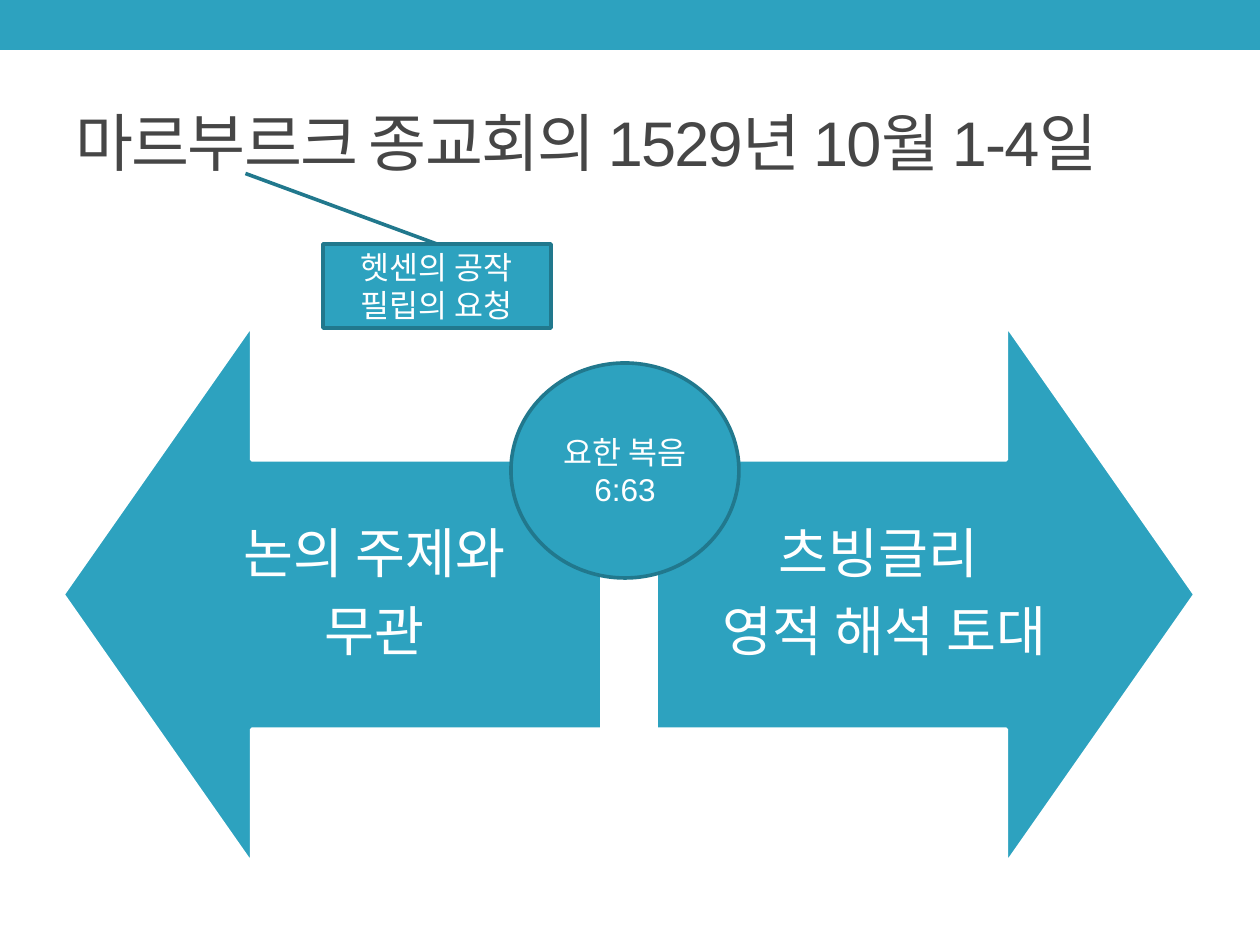
from dataclasses import dataclass

from pptx import Presentation
from pptx.dml.color import RGBColor
from pptx.enum.shapes import MSO_SHAPE
from pptx.enum.text import MSO_ANCHOR, PP_ALIGN
from pptx.util import Emu, Pt

RECTANGLE = MSO_SHAPE.RECTANGLE
ARROW = MSO_SHAPE.UP_ARROW
ELLIPSE = MSO_SHAPE.OVAL
CALLOUT = MSO_SHAPE.LINE_CALLOUT_1
MIDDLE = MSO_ANCHOR.MIDDLE
LEFT, CENTER = PP_ALIGN.LEFT, PP_ALIGN.CENTER

PX = 914400 / 126
SLIDE_W, SLIDE_H = 1260, 945


@dataclass(frozen=True)
class Theme:
    font: str = "Arial"
    teal: str = "2DA2BF"
    dark_teal: str = "21788D"
    white: str = "FFFFFF"
    title_ink: str = "464646"
    title_size: int = 36
    argument_size: int = 31
    note_size: int = 18
    line_width: float = 2.08


def px(length):
    return Emu(round(length * PX))


def assign(target, values):
    for name, value in values.items():
        setattr(target, name, value)


class SlideBuilder:
    def __init__(self, slide, theme):
        self.slide = slide
        self.theme = theme

    def shape(self, kind, box, line=None, rotation=0, adjustments=()):
        shape = self.slide.shapes.add_shape(kind, *map(px, box))
        shape.shadow.inherit = False
        shape.rotation = rotation
        for index, value in enumerate(adjustments):
            shape.adjustments[index] = value
        shape.fill.solid()
        shape.fill.fore_color.rgb = RGBColor.from_string(self.theme.teal)
        if line:
            shape.line.color.rgb = RGBColor.from_string(line)
            shape.line.width = Pt(self.theme.line_width)
        else:
            shape.line.fill.background()
        return shape

    def fill_text(self, shape, lines, size, color, align=CENTER, inset=None,
                  paragraph_format=None, tracking=None):
        """Fill a shape with one paragraph per line; tracking is in 1/100 pt."""
        frame = shape.text_frame
        assign(frame, {"word_wrap": True, "vertical_anchor": MIDDLE})
        if inset is not None:
            sides = ("left", "top", "right", "bottom")
            assign(frame, {f"margin_{side}": px(inset) for side in sides})
        for index, line in enumerate(lines):
            paragraph = frame.add_paragraph() if index else frame.paragraphs[0]
            assign(paragraph, {"alignment": align, **(paragraph_format or {})})
            run = paragraph.add_run()
            run.text = line
            assign(run.font, {"name": self.theme.font, "size": Pt(size)})
            run.font.color.rgb = RGBColor.from_string(color)
            if tracking is not None:
                run._r.get_or_add_rPr().set("spc", str(tracking))

    def text(self, box, lines, size, color, **options):
        textbox = self.slide.shapes.add_textbox(*map(px, box))
        self.fill_text(textbox, lines, size, color, **options)

    def argument(self, arrow_left, text_left, rotation, lines):
        """Draw one sideways arrow with its statement."""
        theme = self.theme
        self.shape(ARROW, (arrow_left, 325, 539, 539), theme.white, rotation, (0.5, 0.35))
        self.text((text_left, 460, 445, 270), lines, theme.argument_size, theme.white,
                  inset=30, paragraph_format={"line_spacing": 0.9, "space_after": Pt(11)})

    def note(self, kind, box, words, adjustments=()):
        theme = self.theme
        shape = self.shape(kind, box, theme.dark_teal, adjustments=adjustments)
        self.fill_text(shape, [words], theme.note_size, theme.white)


def main():
    presentation = Presentation()
    assign(presentation, {"slide_width": px(SLIDE_W), "slide_height": px(SLIDE_H)})
    theme = Theme()
    builder = SlideBuilder(
        presentation.slides.add_slide(presentation.slide_layouts[6]), theme)

    builder.shape(RECTANGLE, (0, 0, SLIDE_W, 50))
    builder.text((63, 73, 1134, 136), ["마르부르크 종교회의 1529년 10월 1-4일"],
                 theme.title_size, theme.title_ink, align=LEFT, tracking=-100)
    builder.argument(63, 158, 270, ["논의 주제와 ", "무관 "])
    builder.argument(656, 656, 90, ["츠빙글리", " 영적 해석 토대"])
    builder.note(ELLIPSE, (511, 363, 228, 215), "요한 복음 6:63")
    builder.note(CALLOUT, (323, 244, 228, 84), "헷센의 공작 필립의 요청",
                 (0, 0.5, -0.84, -0.34))

    presentation.save("out.pptx")


if __name__ == "__main__":
    main()
